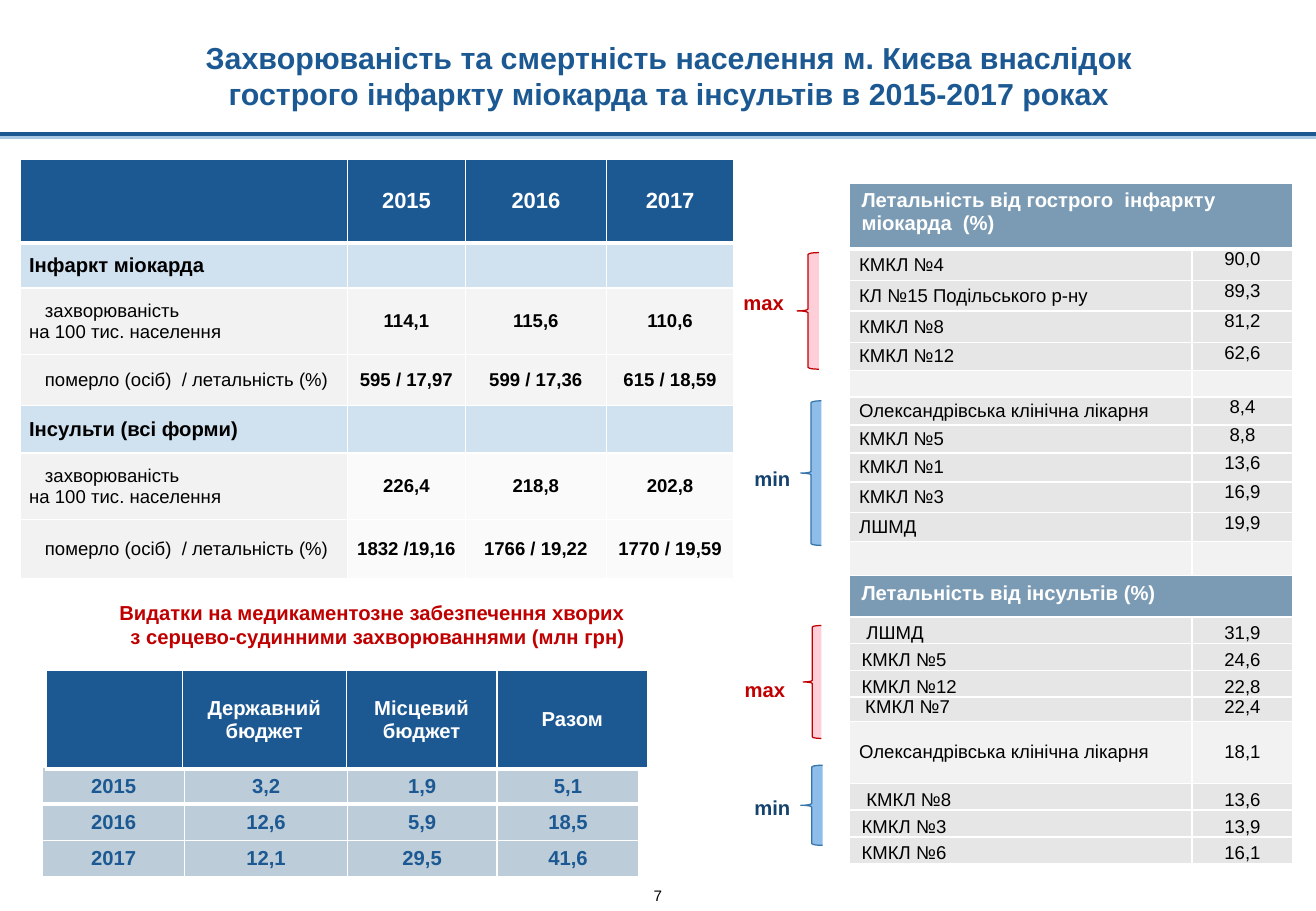
from lxml import etree
from pptx import Presentation
from pptx import util as u
from pptx.dml import color
from pptx.enum import shapes, text
from pptx.oxml import ns

# Content
TITLE = ("Захворюваність та смертність населення м. Києва внаслідок "
         "гострого інфаркту міокарда та інсультів в 2015-2017 роках")
PAGE_NUMBER = "7"
YEARS = ["", "2015", "2016", "2017"]
PER_100K = "захворюваність\vна 100 тис. населення"
DEATHS = "померло (осіб)  / летальність (%)"
INCIDENCE = [  # kind, row height, cells
    ("header", 0.69, YEARS),
    ("group", 0.37, ["Інфаркт міокарда", "", "", ""]),
    ("heart", 0.55, [PER_100K, "114,1", "115,6", "110,6"]),
    ("heart", 0.42, [DEATHS, "595 / 17,97", "599 / 17,36", "615 / 18,59"]),
    ("group", 0.39, ["Інсульти (всі форми)", "", "", ""]),
    ("stroke", 0.55, [PER_100K, "226,4", "218,8", "202,8"]),
    ("stroke", 0.49, [DEATHS, "1832 /19,16", "1766 / 19,22", "1770 / 19,59"]),
]
LETHALITY = [  # kind, row height, hospital, percent
    ("header", 0.54, "Летальність від гострого  інфаркту міокарда  (%)", ""),
    ("heart", 0.26, "КМКЛ №4", "90,0"),
    ("heart", 0.25, "КЛ №15 Подільського р-ну", "89,3"),
    ("heart", 0.26, "КМКЛ №8", "81,2"),
    ("heart", 0.23, "КМКЛ №12", "62,6"),
    ("gap", 0.22, "", ""),
    ("heart", 0.23, "Олександрівська клінічна лікарня", "8,4"),
    ("heart", 0.23, "КМКЛ №5", "8,8"),
    ("heart", 0.24, "КМКЛ №1", "13,6"),
    ("heart", 0.25, "КМКЛ №3", "16,9"),
    ("heart", 0.24, "ЛШМД", "19,9"),
    ("gap", 0.28, "", ""),
    ("header", 0.34, "Летальність від інсультів (%)", ""),
    ("indented", 0.22, "ЛШМД", "31,9"),
    ("stroke", 0.22, "КМКЛ №5", "24,6"),
    ("stroke", 0.22, "КМКЛ №12", "22,8"),
    ("tight", 0.2, "КМКЛ №7", "22,4"),
    ("middle", 0.51, "Олександрівська клінічна лікарня", "18,1"),
    ("indented", 0.22, "КМКЛ №8", "13,6"),
    ("stroke", 0.22, "КМКЛ №3", "13,9"),
    ("stroke", 0.22, "КМКЛ №6", "16,1"),
]
SPENDING_TITLE = ["Видатки на медикаментозне забезпечення хворих ",
                  " з серцево-судинними захворюваннями (млн грн)"]
SPENDING_HEADER = ["", "Державний бюджет", "Місцевий бюджет", "Разом"]
SPENDING = [["2015", "3,2", "1,9", "5,1"],
            ["2016", "12,6", "5,9", "18,5"],
            ["2017", "12,1", "29,5", "41,6"]]
RANGES = [  # label, label position, brace box
    ("max", (6.02, 2.34), (6.56, 2.08, 0.18, 0.96)),
    ("min", (6.11, 3.79), (6.59, 3.3, 0.17, 1.19)),
    ("max", (6.03, 5.53), (6.61, 5.15, 0.15, 0.93)),
    ("min", (6.11, 6.5), (6.59, 6.3, 0.18, 0.66)),
]

# Look
COLORS = dict(navy="1C5993", white="FFFFFF", black="000000", red="C00000", sky="D0E1F0",
              label="F2F2F2", heart="F4F4F4", stroke="FAFAFA", steel="7B9BB4",
              grey="E6E6E6", spending="BCCCD9", glow="A8C7E2")
RANGE_COLORS = {"max": ("C00000", "FECED9", "C00000"),  # text, fill, outline
                "min": ("15436E", "8EBDEA", "3674AA")}
LETHALITY_LOOK = {  # left inset, top inset, anchor of name, anchor of value
    "heart": (0.08, 0, "MIDDLE", "TOP"),
    "gap": (0.08, 0, "MIDDLE", "TOP"),
    "middle": (0.08, 0, "MIDDLE", "MIDDLE"),
    "tight": (0.13, 0, "TOP", "TOP"),
    "stroke": (0.1, 0.05, "TOP", "TOP"),
    "indented": (0.14, 0.05, "TOP", "TOP"),
}
WIDTH, HEIGHT = 10.83, 7.5


def rgb(value):
    return color.RGBColor.from_string(COLORS.get(value, value))


def write(frame, lines, size, ink, bold=False, align="LEFT"):
    for index, line in enumerate(lines):
        para = frame.add_paragraph() if index else frame.paragraphs[0]
        para.text = line
        para.alignment = getattr(text.PP_ALIGN, align)
        font = para.font
        font.name, font.size, font.bold = "Arial", u.Pt(size), bold
        font.color.rgb = rgb(ink)


def set_margins(holder, left, top, right, bottom):
    holder.margin_left, holder.margin_top = u.Inches(left), u.Inches(top)
    holder.margin_right, holder.margin_bottom = u.Inches(right), u.Inches(bottom)


def add_grid(page, left, top, widths, heights):
    box = page.shapes.add_table(len(heights), len(widths), u.Inches(left), u.Inches(top),
                                u.Inches(sum(widths)), u.Inches(sum(heights)))
    table = box.table
    table.first_row = table.horz_banding = False
    for column, width in zip(table.columns, widths):
        column.width = u.Inches(width)
    for row, height in zip(table.rows, heights):
        row.height = u.Inches(height)
    return table


def set_cell(table, row, column, words, fill, size, ink, bold=False, align="LEFT",
             anchor="MIDDLE", inset=(0.07, 0, 0.07, 0)):
    cell = table.cell(row, column)
    properties = cell._tc.get_or_add_tcPr()
    # The rule under the first row is heavier
    weights = {"L": 1, "R": 1, "T": 3 if row == 1 else 1, "B": 3 if row == 0 else 1}
    for side, weight in weights.items():
        line = etree.SubElement(properties, ns.qn(f"a:ln{side}"), w=str(u.Pt(weight)))
        paint = etree.SubElement(line, ns.qn("a:solidFill"))
        etree.SubElement(paint, ns.qn("a:srgbClr"), val=COLORS["white"])
    cell.fill.solid()
    cell.fill.fore_color.rgb = rgb(fill)
    cell.vertical_anchor = getattr(text.MSO_ANCHOR, anchor)
    set_margins(cell, *inset)
    write(cell.text_frame, [words], size, ink, bold, align)
    return cell


def add_text(page, left, top, width, height, lines, size, ink, bold=False, align="LEFT"):
    box = page.shapes.add_textbox(*map(u.Inches, (left, top, width, height)))
    box.text_frame.word_wrap = False
    write(box.text_frame, lines, size, ink, bold, align)
    return box


def add_heading(page):
    title = page.shapes.title
    title.left, title.top, title.width, title.height = map(u.Inches, (1.26, 0.29, 8.49, 0.68))
    frame = title.text_frame
    frame.auto_size, frame.word_wrap = text.MSO_AUTO_SIZE.NONE, True
    frame.vertical_anchor = text.MSO_ANCHOR.BOTTOM
    set_margins(frame, 0, 0.05, 0, 0.05)
    write(frame, [TITLE], 18, "navy", True, "CENTER")
    rule = page.shapes.add_connector(shapes.MSO_CONNECTOR.STRAIGHT, u.Inches(WIDTH),
                                     u.Inches(1.1), 0, u.Inches(1.1))
    rule.line.color.rgb, rule.line.width = rgb("navy"), u.Pt(2.25)
    effects = etree.SubElement(rule._element.spPr, ns.qn("a:effectLst"))
    shadow = etree.SubElement(effects, ns.qn("a:outerShdw"), blurRad="0",
                              dist=str(u.Pt(2)), dir="5400000", rotWithShape="0")
    etree.SubElement(shadow, ns.qn("a:srgbClr"), val=COLORS["glow"])


def add_incidence(page):
    table = add_grid(page, 0.17, 1.31, [2.69, 0.97, 1.16, 1.05], [row[1] for row in INCIDENCE])
    for r, (kind, _, cells) in enumerate(INCIDENCE):
        for c, words in enumerate(cells):
            align = "CENTER" if c else "LEFT"
            if kind == "header":
                set_cell(table, r, c, words, "navy", 13, "white", True, align)
            elif kind == "group":
                set_cell(table, r, c, words, "sky", 12, "black", True, align)
            else:
                cell = set_cell(table, r, c, words, kind if c else "label", 11, "black",
                                c > 0, align)
                if c == 0:  # first-line indent
                    para = cell.text_frame.paragraphs[0]
                    para._p.get_or_add_pPr().set("indent", str(u.Inches(0.13)))


def add_lethality(page):
    table = add_grid(page, 6.99, 1.51, [2.82, 0.83], [row[1] for row in LETHALITY])
    for r, (kind, _, hospital, percent) in enumerate(LETHALITY):
        if kind == "header":
            table.cell(r, 0).merge(table.cell(r, 1))
            set_cell(table, r, 0, hospital, "steel", 12, "white", True, "LEFT", "TOP",
                     (0.1, 0.05, 0.1, 0.05))
            continue
        left, top, name_anchor, value_anchor = LETHALITY_LOOK[kind]
        fill = "label" if kind in ("gap", "middle") else "grey"
        set_cell(table, r, 0, hospital, fill, 11, "black", False, "LEFT", name_anchor,
                 (left, top, 0, 0))
        set_cell(table, r, 1, percent, fill, 11, "black", False, "CENTER", value_anchor,
                 (0, top, 0, 0))


def add_spending(page):
    add_text(page, 0.86, 4.89, 4.45, 0.51, SPENDING_TITLE, 12, "red", True, "CENTER")
    parts = [(0.35, 6.32, [1.17, 1.34, 1.23, 1.17], 0.3, SPENDING, "spending", "navy"),
             (0.38, 5.52, [1.12, 1.35, 1.24, 1.24], 0.81, [SPENDING_HEADER], "navy", "white")]
    for left, top, widths, height, rows, fill, ink in parts:
        table = add_grid(page, left, top, widths, [height] * len(rows))
        for r, cells in enumerate(rows):
            for c, words in enumerate(cells):
                set_cell(table, r, c, words, fill, 12, ink, True, "CENTER", "MIDDLE",
                         (0.1, 0.05, 0.1, 0.05))


def add_ranges(page):
    for label, (left, top), place in RANGES:
        ink, fill, outline = RANGE_COLORS[label]
        brace = page.shapes.add_shape(shapes.MSO_SHAPE.LEFT_BRACE, *map(u.Inches, place))
        brace.shadow.inherit = False
        brace.fill.solid()
        brace.fill.fore_color.rgb = rgb(fill)
        brace.line.color.rgb, brace.line.width = rgb(outline), u.Pt(0.75)
        add_text(page, left, top, 0.54 if label == "max" else 0.5, 0.3, [label], 12, ink, True)


def main():
    deck = Presentation()
    deck.slide_width, deck.slide_height = u.Inches(WIDTH), u.Inches(HEIGHT)
    page = deck.slides.add_slide(deck.slide_layouts[5])
    add_heading(page)
    add_incidence(page)
    add_lethality(page)
    add_ranges(page)
    add_spending(page)
    number = add_text(page, 5.31, 7.3, 0.21, 0.15, [PAGE_NUMBER], 9, "black", False, "CENTER")
    set_margins(number.text_frame, 0, 0, 0, 0)
    deck.save("out.pptx")


if __name__ == "__main__":
    main()
